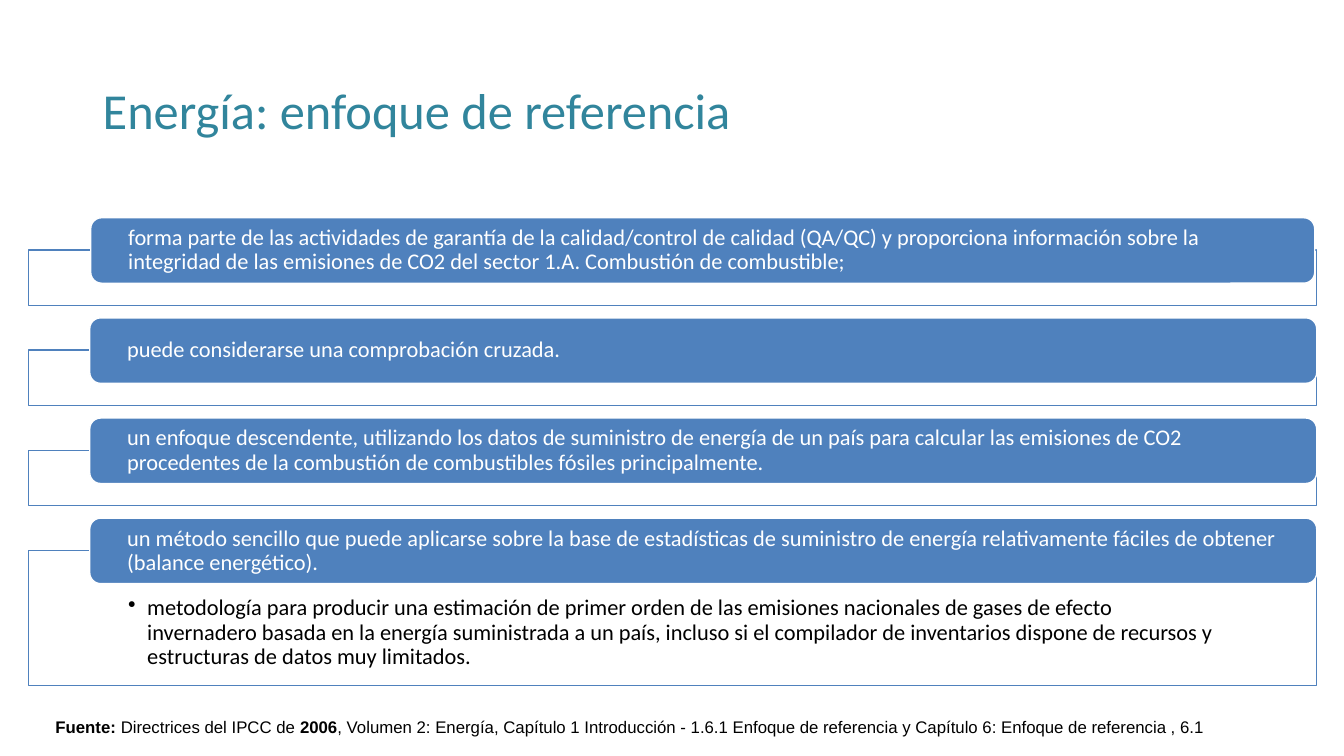
"""Build the slide on the reference approach for energy."""
from lxml.etree import SubElement
from pptx import Presentation
from pptx.dml.color import RGBColor
from pptx.enum.shapes import MSO_SHAPE as Kind
from pptx.enum.text import MSO_ANCHOR as Anchor, PP_ALIGN as Align
from pptx.oxml.ns import qn
from pptx.util import Inches, Pt

BLUE, WHITE, BLACK, TEAL = "4F81BD", "FFFFFF", "000000", "31859C"


def write(shape, runs, size, color, font="Calibri", pad=(0.1, 0.05, 0.1, 0.05),
          anchor=Anchor.MIDDLE, line=0.9):
    frame = shape.text_frame
    frame.word_wrap = True
    frame.vertical_anchor = anchor
    frame.margin_left, frame.margin_top, frame.margin_right, frame.margin_bottom = map(Inches, pad)
    para = frame.paragraphs[0]
    para.alignment = Align.LEFT
    para.line_spacing = line
    for text, bold in runs:
        run = para.add_run()
        run.text = text
        run.font.size = Pt(size)
        run.font.name = font
        run.font.bold = bold
        run.font.color.rgb = RGBColor.from_string(color)
    return para


def panel(kind, box, fill, edge):
    shape = slide.shapes.add_shape(kind, *map(Inches, box))
    shape.shadow.inherit = False
    shape.fill.solid()
    shape.fill.fore_color.rgb = RGBColor.from_string(fill)
    shape.line.color.rgb = RGBColor.from_string(edge)
    shape.line.width = Pt(1)
    return shape


deck = Presentation()
deck.slide_width, deck.slide_height = Inches(13.33), Inches(7.5)
slide = deck.slides.add_slide(deck.slide_layouts[6])

title = slide.shapes.add_textbox(*map(Inches, (0.92, 0.4, 11.5, 1.45)))
write(title, [("Energía: enfoque de referencia", False)], 36, TEAL)

points = [
    "forma parte de las actividades de garantía de la calidad/control de calidad (QA/QC) y proporciona "
    "información sobre la integridad de las emisiones de CO2 del sector 1.A. Combustión de combustible;",
    "puede considerarse una comprobación cruzada.",
    "un enfoque descendente, utilizando los datos de suministro de energía de un país para calcular las "
    "emisiones de CO2 procedentes de la combustión de combustibles fósiles principalmente.",
    "un método sencillo que puede aplicarse sobre la base de estadísticas de suministro de energía "
    "relativamente fáciles de obtener (balance energético).",
]
detail = (
    "metodología para producir una estimación de primer orden de las emisiones nacionales de gases de "
    "efecto invernadero basada en la energía suministrada a un país, incluso si el compilador de "
    "inventarios dispone de recursos y estructuras de datos muy limitados."
)
last = len(points) - 1
for row, point in enumerate(points):
    top = 2.16 + row * 2.98 / last
    high = 1.34 if row == last else 0.55
    frame = panel(Kind.RECTANGLE, (0.28, top + 0.32, 12.78, high), WHITE, BLUE)
    tint = frame.fill._xPr.find(qn("a:solidFill"))[0]
    SubElement(tint, qn("a:alpha"), val="90000")
    if row == last:
        para = write(frame, [(detail, False)], 16, BLACK,
                     pad=(0.99, 0.46, 0.99, 0.12), anchor=Anchor.TOP)
        props = para._p.get_or_add_pPr()
        props.set("marL", str(Inches(0.19)))
        props.set("indent", str(Inches(-0.19)))
        SubElement(props, qn("a:buChar"), char="•")
    left, wide = (0.9, 12.14) if row == 0 else (0.89, 12.17)
    bar = panel(Kind.ROUNDED_RECTANGLE, (left, top, wide, 0.65), BLUE, WHITE)
    write(bar, [(point, False)], 16, WHITE, pad=(0.34, 0, 0.34, 0))

source = slide.shapes.add_textbox(*map(Inches, (0.53, 7.11, 11.43, 0.2)))
runs = [
    ("Fuente: ", True),
    ("Directrices del IPCC de", False),
    (" 2006", True),
    (", Volumen 2: Energía, Capítulo 1 Introducción - 1.6.1 Enfoque de referencia y "
     "Capítulo 6: Enfoque de referencia , 6.1", False),
]
write(source, runs, 12, BLACK, "Arial", (0.02, 0, 0, 0), Anchor.TOP, 1.0)

deck.save("out.pptx")
